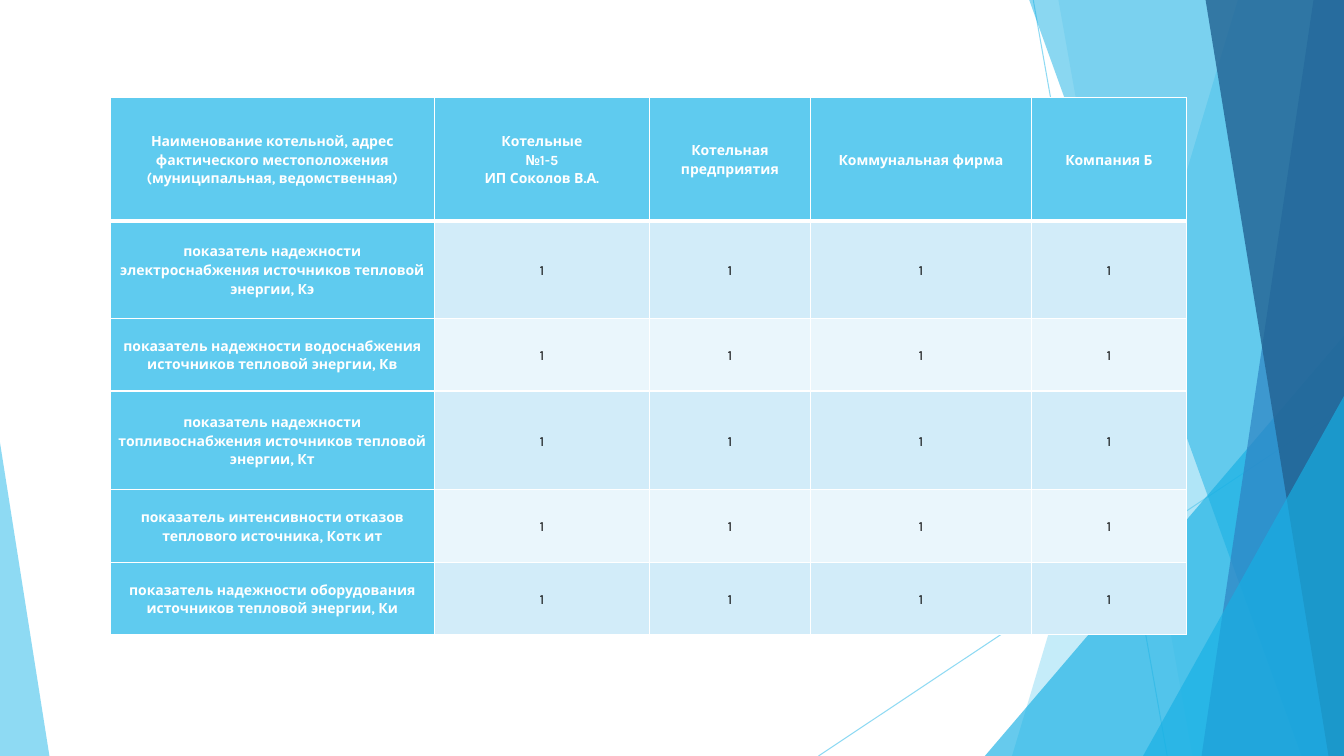
from dataclasses import dataclass

import pptx
import pptx.dml.color
import pptx.enum.shapes
import pptx.enum.text
import pptx.oxml
import pptx.oxml.ns
import pptx.util

RGBColor = pptx.dml.color.RGBColor
SKY = RGBColor(0x5F, 0xCB, 0xEF)
CYAN = RGBColor(0x17, 0xB0, 0xE4)
BLUE = RGBColor(0x2E, 0x83, 0xC3)
NAVY = RGBColor(0x22, 0x62, 0x92)
BAND_DARK = RGBColor(0xD2, 0xEC, 0xF9)
BAND_LIGHT = RGBColor(0xEA, 0xF6, 0xFC)
WHITE = RGBColor(0xFF, 0xFF, 0xFF)
BLACK = RGBColor(0x00, 0x00, 0x00)

SLIDE_W = pptx.util.Inches(13.33)
SLIDE_H = pptx.util.Inches(7.5)


@dataclass
class Ray:
    """Thin line; ends in percent of the slide."""
    x1: float
    y1: float
    x2: float
    y2: float


@dataclass
class Band:
    """Full-height shape from a slanted left side to the right slide edge."""
    top_x: float
    bottom_x: float
    color: RGBColor
    opacity: int


@dataclass
class Wedge:
    """Right triangle standing on the bottom slide edge."""
    left: float
    top: float
    width: float
    apex: float
    color: RGBColor
    opacity: int


RAYS = [Ray(76.88, 0, 86.85, 100), Ray(100, 53.73, 60.9, 100)]
DECOR = [
    Band(92.1, 75.3, SKY, 36),
    Band(78.75, 88.73, SKY, 20),
    Wedge(73.28, 44.4, 26.72, 1, CYAN, 66),
    Band(76.58, 96.83, CYAN, 50),
    Band(97.73, 89.4, BLUE, 70),
    Band(89.7, 98.85, NAVY, 80),
    Wedge(85.05, 52.4, 14.95, 1, CYAN, 66),
    Wedge(0, 58.53, 3.68, 0, SKY, 70),
]

TABLE_LEFT, TABLE_TOP = 8.18, 12.93
COL_WIDTHS = [24.15, 15.98, 12, 16.43, 11.55]
ROW_HEIGHTS = [16.27, 12.93, 9.6, 13.07, 9.6, 9.6]
HEADER = [
    "Наименование котельной, адрес фактического местоположения (муниципальная, ведомственная)",
    "Котельные\n№1-5\nИП Соколов В.А.",
    "Котельная предприятия",
    "Коммунальная фирма",
    "Компания Б",
]
INDICATORS = [
    "показатель надежности электроснабжения источников тепловой энергии, Кэ",
    "показатель надежности водоснабжения источников тепловой энергии, Кв",
    "показатель надежности топливоснабжения источников тепловой энергии, Кт",
    "показатель интенсивности отказов теплового источника, Котк ит",
    "показатель надежности оборудования источников тепловой энергии, Ки",
]


def px(share: float) -> int:
    return round(SLIDE_W * share / 100)


def py(share: float) -> int:
    return round(SLIDE_H * share / 100)


def set_opacity(props, opacity: int) -> None:
    for clr in props.iter(pptx.oxml.ns.qn("a:srgbClr")):
        alpha = clr.makeelement(pptx.oxml.ns.qn("a:alpha"), {"val": str(opacity * 1000)})
        clr.append(alpha)


def draw_ray(s, ray: Ray) -> None:
    line = s.shapes.add_connector(
        pptx.enum.shapes.MSO_CONNECTOR.STRAIGHT,
        px(ray.x1), py(ray.y1), px(ray.x2), py(ray.y2))
    line.line.color.rgb = SKY
    line.line.width = pptx.util.Pt(0.75)
    props = line._element.spPr
    set_opacity(props, 70)
    props.append(props.makeelement(pptx.oxml.ns.qn("a:effectLst"), {}))


def draw_decor(s, item: Band | Wedge) -> None:
    if isinstance(item, Band):
        builder = s.shapes.build_freeform(px(item.top_x), 0)
        builder.add_line_segments(
            [(SLIDE_W, 0), (SLIDE_W, SLIDE_H), (px(item.bottom_x), SLIDE_H)], close=True)
        sp = builder.convert_to_shape()
    else:
        sp = s.shapes.add_shape(
            pptx.enum.shapes.MSO_SHAPE.ISOSCELES_TRIANGLE,
            px(item.left), py(item.top), px(item.width), py(100 - item.top))
        sp.adjustments[0] = item.apex
    sp.shadow.inherit = False
    sp.fill.solid()
    sp.fill.fore_color.rgb = item.color
    sp.line.fill.background()
    set_opacity(sp._element.spPr, item.opacity)


def set_borders(cell, top: int, bottom: int) -> None:
    tc_pr = cell._tc.get_or_add_tcPr()
    for side, width in (("L", 1), ("R", 1), ("T", top), ("B", bottom)):
        tc_pr.append(pptx.oxml.parse_xml(
            f'<a:ln{side} {pptx.oxml.ns.nsdecls("a")} w="{pptx.util.Pt(width)}">'
            f'<a:solidFill><a:srgbClr val="{WHITE}"/></a:solidFill></a:ln{side}>'))


def fill_cell(cell, text: str, row: int, col: int) -> None:
    heading = row == 0 or col == 0
    set_borders(cell, top=3 if row == 1 else 1, bottom=3 if row == 0 else 1)
    cell.fill.solid()
    cell.fill.fore_color.rgb = SKY if heading else BAND_DARK if row % 2 else BAND_LIGHT
    cell.vertical_anchor = pptx.enum.text.MSO_ANCHOR.MIDDLE
    cell.margin_left = cell.margin_right = pptx.util.Inches(0.07)
    cell.margin_top = cell.margin_bottom = 0
    tf = cell.text_frame
    for i, part in enumerate(text.split("\n")):
        p = tf.add_paragraph() if i else tf.paragraphs[0]
        p.alignment = pptx.enum.text.PP_ALIGN.CENTER
        p.line_spacing = 1.15
        r = p.add_run()
        r.text = part
        r.font.name = "Karla"
        r.font.size = pptx.util.Pt(10)
        r.font.bold = heading
        r.font.color.rgb = WHITE if heading else BLACK


def draw_table(s) -> None:
    rows = [HEADER] + [[name] + ["1"] * (len(HEADER) - 1) for name in INDICATORS]
    table = s.shapes.add_table(
        len(rows), len(HEADER), px(TABLE_LEFT), py(TABLE_TOP),
        px(sum(COL_WIDTHS)), py(sum(ROW_HEIGHTS))).table
    table.first_col = True
    for column, width in zip(table.columns, COL_WIDTHS):
        column.width = px(width)
    for row, height in zip(table.rows, ROW_HEIGHTS):
        row.height = py(height)
    for i, texts in enumerate(rows):
        for j, text in enumerate(texts):
            fill_cell(table.cell(i, j), text, i, j)


def main() -> None:
    prs = pptx.Presentation()
    prs.slide_width, prs.slide_height = SLIDE_W, SLIDE_H
    s = prs.slides.add_slide(prs.slide_layouts[6])

    # Background decoration, back to front
    for ray in RAYS:
        draw_ray(s, ray)
    for item in DECOR:
        draw_decor(s, item)

    # Reliability indicators
    draw_table(s)
    prs.save("out.pptx")


if __name__ == "__main__":
    main()
